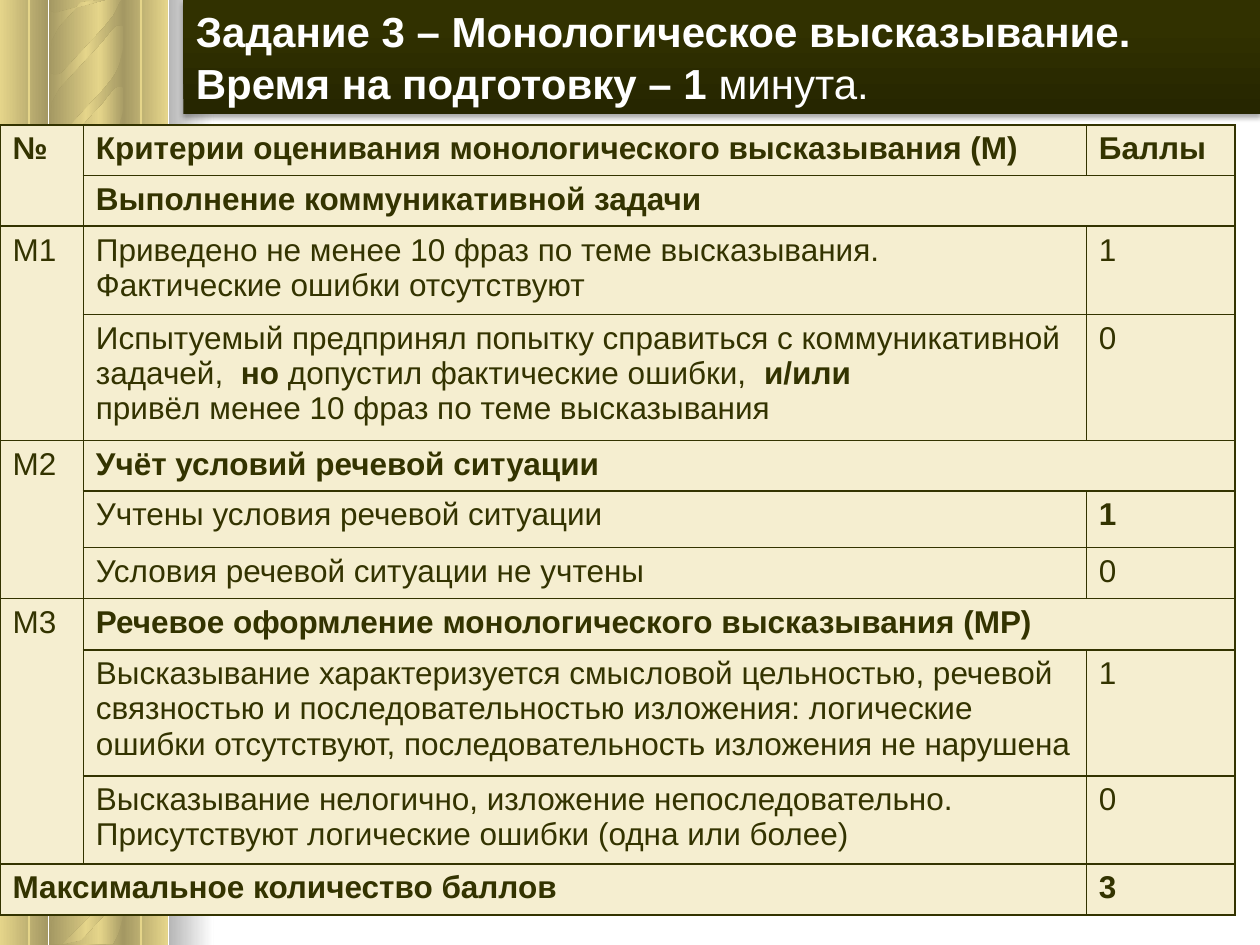
"""Build a slide with the marking criteria for a monologue task."""
from dataclasses import dataclass

import lxml.etree
import pptx
import pptx.dml.color
import pptx.enum.shapes
import pptx.enum.text
import pptx.oxml.ns
import pptx.shapes.autoshape
import pptx.slide
import pptx.table
import pptx.text.text
import pptx.util
from pptx.util import Cm

Stops = tuple[tuple[int, str], ...]


@dataclass(frozen=True)
class Theme:
    font: str = "Arial"
    title_size: int = 24
    body_size: int = 18
    white: str = "FFFFFF"
    ink: str = "333300"
    cell: str = "F5EED0"
    gold: str = "E5D58A"
    light_to_dark: Stops = ((0, "E5D58A"), (100, "A49863"))
    dark_to_light: Stops = ((0, "A49863"), (100, "E5D58A"))
    ribbon: Stops = ((0, "A49863"), (50, "E5D58A"), (100, "A49863"))
    fade: Stops = ((0, "B6B6B6"), (100, "FFFFFF"))
    banner: Stops = ((0, "262600"), (80, "313100"), (100, "323200"))


@dataclass(frozen=True)
class Band:
    left: float
    width: float
    stops: Stops


@dataclass(frozen=True)
class PillarHalf:
    top: float
    height: float
    ribbon_tops: tuple[float, ...]


@dataclass(frozen=True)
class Entry:
    row: int
    column: int
    text: str
    row_span: int = 1
    column_span: int = 1


THEME = Theme()
SLIDE_WIDTH, SLIDE_HEIGHT = 25.4, 19.05
BANDS = (
    Band(2.01, 0.51, THEME.light_to_dark),
    Band(0, 0.97, THEME.light_to_dark),
    Band(0.99, 1.02, THEME.dark_to_light),
    Band(2.49, 0.89, THEME.dark_to_light),
)
HALVES = (
    PillarHalf(9.47, 9.58, (11.63, 12.83, 13.94, 15.09, 16.21, 17.35, 10.44, 9.17)),
    PillarHalf(0, 9.55, (2.18, 3.33, 4.45, 5.59, 6.71, 18.42, 0.94, -0.3, -1.55, 7.92)),
)
RIBBON_OUTLINE = (
    (2.49, 0.23), (2.49, 0.84), (2.46, 0.81), (2.36, 0.81), (2.31, 0.84), (2.24, 0.91),
    (2.06, 1.14), (1.63, 1.6), (1.19, 2.08), (1.12, 2.21), (1.04, 2.36), (1.02, 2.57),
    (0.99, 2.84), (0.99, 1.6), (0.99, 1.73), (1.02, 1.78), (1.07, 1.8), (1.12, 1.8),
    (1.17, 1.8), (1.24, 1.78), (2.11, 0.84), (2.29, 0.61), (2.36, 0.48), (2.41, 0.36),
    (2.46, 0.15), (2.49, 0), (2.49, 0.51),
)
HIGHLIGHTS = (0.58, 2.84)
TITLE = "*Задание 3 – Монологическое высказывание.*\n*Время на подготовку – 1* минута."
COLUMN_WIDTHS = (1.68, 20.22, 3)
ROW_HEIGHTS = (1.02, 1.02, 1.78, 2.54, 1.02, 1.14, 1.03, 1.03, 2.54, 1.78, 1.03)
ENTRIES = (
    Entry(0, 0, "*№*", row_span=2),
    Entry(0, 1, "*Критерии оценивания монологического высказывания (М)*"),
    Entry(0, 2, "*Баллы*"),
    Entry(1, 1, "*Выполнение коммуникативной задачи*", column_span=2),
    Entry(2, 0, "М1", row_span=2),
    Entry(2, 1, "Приведено не менее 10 фраз по теме высказывания.\nФактические ошибки отсутствуют"),
    Entry(2, 2, "1"),
    Entry(3, 1, "Испытуемый предпринял попытку справиться с коммуникативной задачей,  *но *"
                "допустил фактические ошибки,  *и/или*\nпривёл менее 10 фраз по теме высказывания"),
    Entry(3, 2, "0"),
    Entry(4, 0, "М2", row_span=3),
    Entry(4, 1, "*Учёт условий речевой ситуации*", column_span=2),
    Entry(5, 1, "Учтены условия речевой ситуации"),
    Entry(5, 2, "*1*"),
    Entry(6, 1, "Условия речевой ситуации не учтены"),
    Entry(6, 2, "0"),
    Entry(7, 0, "М3", row_span=3),
    Entry(7, 1, "*Речевое оформление монологического высказывания (МР)*", column_span=2),
    Entry(8, 1, "Высказывание характеризуется смысловой цельностью, речевой связностью и "
                "последовательностью изложения: логические ошибки отсутствуют, "
                "последовательность изложения не нарушена"),
    Entry(8, 2, "1"),
    Entry(9, 1, "Высказывание нелогично, изложение непоследовательно.\n"
                "Присутствуют логические ошибки (одна или более)"),
    Entry(9, 2, "0"),
    Entry(10, 0, "*Максимальное количество баллов*", column_span=2),
    Entry(10, 2, "*3*"),
)


def add_element(parent: lxml.etree._Element, tag: str, **attributes: str) -> lxml.etree._Element:
    return lxml.etree.SubElement(parent, pptx.oxml.ns.qn(tag), **attributes)


def rgb(value: str) -> pptx.dml.color.RGBColor:
    return pptx.dml.color.RGBColor.from_string(value)


def paint(shape: pptx.shapes.autoshape.Shape, stops: Stops, angle: int = 0) -> None:
    shape.shadow.inherit = False
    shape.line.fill.background()
    shape.fill.gradient()
    shape.fill.gradient_angle = angle
    stop_list = shape.element.spPr.find(".//" + pptx.oxml.ns.qn("a:gsLst"))
    for old_stop in list(stop_list):
        stop_list.remove(old_stop)
    for position, colour in stops:
        stop = add_element(stop_list, "a:gs", pos=str(position * 1000))
        add_element(stop, "a:srgbClr", val=colour)


def add_band(page: pptx.slide.Slide, band: Band, top: float, height: float) -> None:
    box = page.shapes.add_shape(pptx.enum.shapes.MSO_SHAPE.RECTANGLE,
                                Cm(band.left), Cm(top), Cm(band.width), Cm(height))
    paint(box, band.stops)


def add_ribbon(page: pptx.slide.Slide, top: float, upper_limit: float) -> None:
    points = [(Cm(x), Cm(min(max(top + y, upper_limit), SLIDE_HEIGHT))) for x, y in RIBBON_OUTLINE]
    builder = page.shapes.build_freeform(*points[0])
    builder.add_line_segments(points[1:], close=True)
    paint(builder.convert_to_shape(), THEME.ribbon)


def add_highlight(page: pptx.slide.Slide, left: float) -> None:
    line = page.shapes.add_connector(pptx.enum.shapes.MSO_CONNECTOR.STRAIGHT,
                                     Cm(left), Cm(0), Cm(left), Cm(SLIDE_HEIGHT))
    line.line.color.rgb = rgb(THEME.gold)
    line.line.width = pptx.util.Pt(1)
    add_element(line.element.spPr, "a:effectLst")


def write(frame: pptx.text.text.TextFrame, marked: str, size: int, colour: str) -> None:
    lines = marked.split("\n")
    frame.text = "\n" * (len(lines) - 1)
    for para, line in zip(frame.paragraphs, lines):
        para.alignment = pptx.enum.text.PP_ALIGN.LEFT
        for index, piece in enumerate(line.split("*")):
            if piece:
                span = para.add_run()
                span.text = piece
                span.font.name = THEME.font
                span.font.size = pptx.util.Pt(size)
                span.font.bold = index % 2 == 1
                span.font.color.rgb = rgb(colour)


def add_banner(page: pptx.slide.Slide) -> None:
    box = page.shapes.add_shape(pptx.enum.shapes.MSO_SHAPE.RECTANGLE,
                                Cm(3.7), Cm(0), Cm(SLIDE_WIDTH - 3.7), Cm(2.3))
    paint(box, THEME.banner, angle=90)
    effects = box.element.spPr.find(pptx.oxml.ns.qn("a:effectLst"))
    shadow = add_element(effects, "a:outerShdw", blurRad="40000", dist="23000", dir="5400000", rotWithShape="0")
    add_element(add_element(shadow, "a:srgbClr", val="000000"), "a:alpha", val="35000")
    box.text_frame.word_wrap = True
    box.text_frame.vertical_anchor = pptx.enum.text.MSO_ANCHOR.MIDDLE
    write(box.text_frame, TITLE, THEME.title_size, THEME.white)
    box.text_frame.paragraphs[1].space_before = pptx.util.Pt(1)


def style_cell(cell: pptx.table._Cell) -> None:
    cell.fill.solid()
    cell.fill.fore_color.rgb = rgb(THEME.cell)
    properties = cell._tc.get_or_add_tcPr()
    for index, side in enumerate(("a:lnL", "a:lnR", "a:lnT", "a:lnB")):
        border = add_element(properties, side, w="12700")
        add_element(add_element(border, "a:solidFill"), "a:srgbClr", val=THEME.ink)
        properties.insert(index, border)


def add_criteria(page: pptx.slide.Slide) -> None:
    table = page.shapes.add_table(len(ROW_HEIGHTS), len(COLUMN_WIDTHS), Cm(0), Cm(2.52),
                                  Cm(sum(COLUMN_WIDTHS)), Cm(sum(ROW_HEIGHTS))).table
    table.first_row = table.horz_banding = False
    for column, width in zip(table.columns, COLUMN_WIDTHS):
        column.width = Cm(width)
    for row, height in zip(table.rows, ROW_HEIGHTS):
        row.height = Cm(height)
    for cell in table.iter_cells():
        style_cell(cell)
    for entry in ENTRIES:
        cell = table.cell(entry.row, entry.column)
        if entry.row_span * entry.column_span > 1:
            cell.merge(table.cell(entry.row + entry.row_span - 1, entry.column + entry.column_span - 1))
        write(cell.text_frame, entry.text, THEME.body_size, THEME.ink)


def main() -> None:
    deck = pptx.Presentation()
    deck.slide_width, deck.slide_height = Cm(SLIDE_WIDTH), Cm(SLIDE_HEIGHT)
    page = deck.slides.add_slide(deck.slide_layouts[6])
    for half in HALVES:
        for band in BANDS:
            add_band(page, band, half.top, half.height)
        for top in half.ribbon_tops:
            add_ribbon(page, top, half.top)
    add_band(page, Band(3.4, 0.91, THEME.fade), 0, SLIDE_HEIGHT)
    for left in HIGHLIGHTS:
        add_highlight(page, left)
    add_banner(page)
    add_criteria(page)
    deck.save("out.pptx")


if __name__ == "__main__":
    main()
